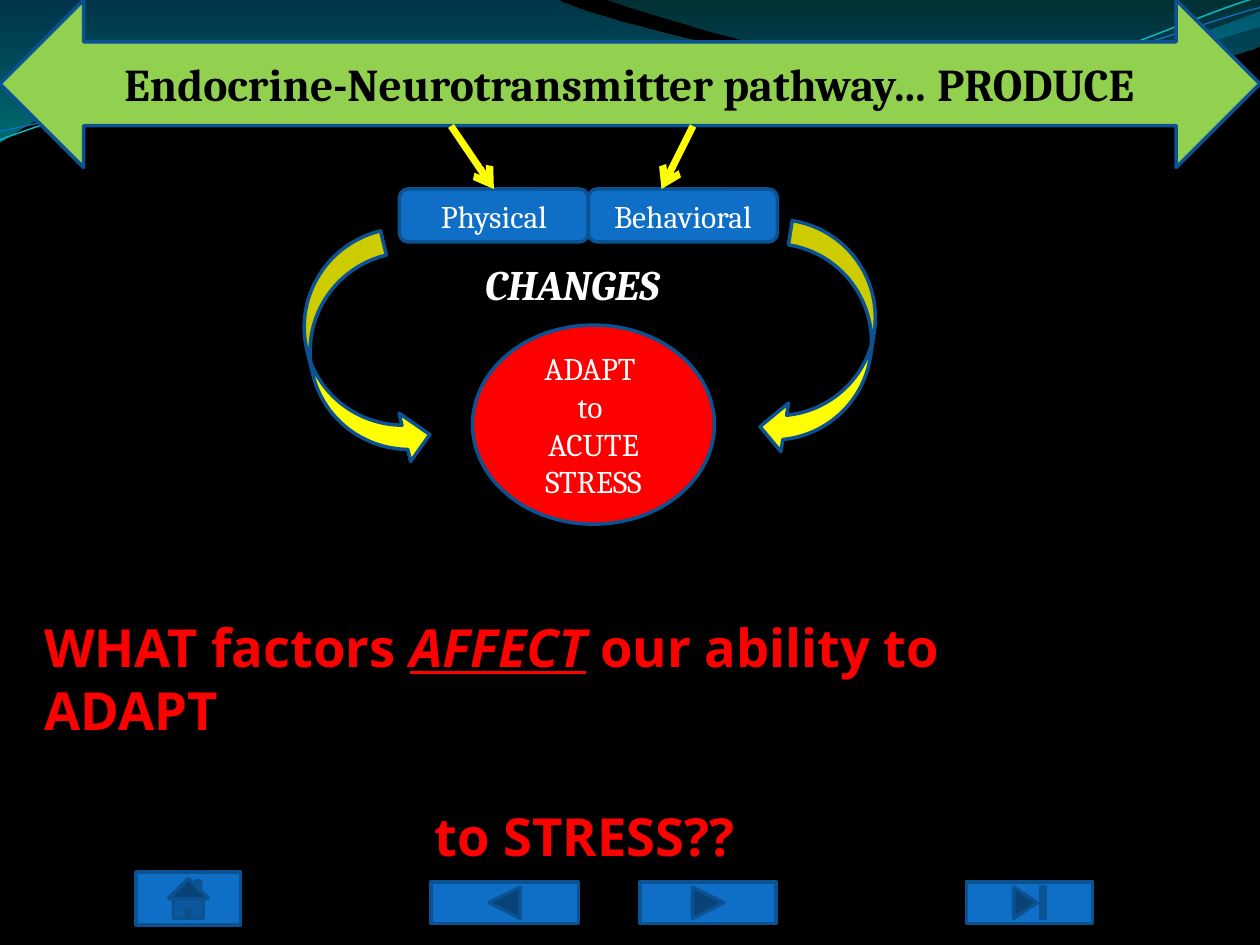
import dataclasses

import lxml.etree
import pptx
import pptx.dml.color
import pptx.enum.shapes
import pptx.enum.text
import pptx.oxml.ns
import pptx.util

SHAPES = pptx.enum.shapes.MSO_SHAPE
ALIGN = pptx.enum.text.PP_ALIGN
ANCHOR = pptx.enum.text.MSO_ANCHOR
Inches = pptx.util.Inches
Pt = pptx.util.Pt
qn = pptx.oxml.ns.qn


@dataclasses.dataclass(frozen=True)
class Theme:
    background: str = "000000"
    blue: str = "0F6FC6"
    outline: str = "0B5292"
    green: str = "92D050"
    yellow: str = "FFFF00"
    red: str = "FF0000"
    white: str = "FFFFFF"
    black: str = "000000"
    strand: str = "0AB8BF"
    wave_stops: tuple = ((0, "0074A1", 45), (1, "00C6CF", 55))
    crest_stops: tuple = ((0, "00A1A9", 30), (0.8, "008BBF", 45))
    serif: str = "Cambria"
    sans: str = "Open Sans"
    label_size: float = 18
    changes_size: float = 24
    heading_size: float = 26
    question_size: float = 30
    outline_width: float = 2
    pointer_width: float = 4


def rgb(value):
    return pptx.dml.color.RGBColor.from_string(value)


def add_xml(parent, tag, **attributes):
    return lxml.etree.SubElement(parent, qn(tag), attributes)


class SlideBuilder:
    def __init__(self, slide, theme):
        self.slide = slide
        self.theme = theme
        slide.background.fill.solid()
        slide.background.fill.fore_color.rgb = rgb(theme.background)

    def style_font(self, font, size, color, name=None, bold=False, italic=False):
        font.name = name or self.theme.serif
        font.size = Pt(size)
        font.color.rgb = rgb(color)
        font.bold = bold
        font.italic = italic

    def curved_outline(self, start, segments, closed):
        """Outline of cubic curves (6 numbers) and straight lines (2 numbers)."""
        anchors = [(Inches(s[-2]), Inches(s[-1])) for s in segments]
        builder = self.slide.shapes.build_freeform(*map(Inches, start))
        builder.add_line_segments(anchors, close=closed)
        outline = builder.convert_to_shape()
        outline.shadow.inherit = False
        # Bend the straight segments into cubic curves
        lines = list(outline._element.iter(qn("a:lnTo")))
        for line, segment in zip(lines, segments):
            if len(segment) == 6:
                curve = lxml.etree.Element(qn("a:cubicBezTo"))
                for x, y in zip(segment[::2], segment[1::2]):
                    add_xml(curve, "a:pt", x=str(Inches(x) - outline.left),
                            y=str(Inches(y) - outline.top))
                line.getparent().replace(line, curve)
        return outline

    def wave(self, start, segments, stops):
        """Closed band with a see-through vertical gradient."""
        band = self.curved_outline(start, segments, True)
        band.line.fill.background()
        band.fill.gradient()
        band.fill.gradient_angle = 270
        for stop, (position, color, _) in zip(band.fill.gradient_stops, stops):
            stop.position = position
            stop.color.rgb = rgb(color)
        colors = list(band._element.spPr.iter(qn("a:srgbClr")))
        for color, (_, _, opacity) in zip(colors, stops):
            add_xml(color, "a:alpha", val=str(opacity * 1000))

    def strand(self, start, segments, color, width):
        strand = self.curved_outline(start, segments, False)
        strand.fill.background()
        strand.line.color.rgb = rgb(color)
        strand.line.width = Pt(width)

    def shape(self, kind, box, fill, lines=(), size=None, color=None, bold=False, rotation=0):
        shape = self.slide.shapes.add_shape(kind, *map(Inches, box))
        shape.shadow.inherit = False
        shape.rotation = rotation
        shape.fill.solid()
        shape.fill.fore_color.rgb = rgb(fill)
        shape.line.color.rgb = rgb(self.theme.outline)
        shape.line.width = Pt(self.theme.outline_width)
        if lines:
            frame = shape.text_frame
            frame.vertical_anchor = ANCHOR.MIDDLE
            frame.text = "\n".join(lines)
            for paragraph in frame.paragraphs:
                paragraph.alignment = ALIGN.CENTER
                self.style_font(paragraph.font, size or self.theme.label_size,
                                color or self.theme.white, bold=bold)

    def pointer(self, start, end):
        pointer = self.slide.shapes.add_connector(
            pptx.enum.shapes.MSO_CONNECTOR.STRAIGHT, *map(Inches, start + end))
        pointer.line.color.rgb = rgb(self.theme.yellow)
        pointer.line.width = Pt(self.theme.pointer_width)
        properties = pointer._element.spPr
        add_xml(properties.find(qn("a:ln")), "a:tailEnd", type="arrow")
        add_xml(properties, "a:effectLst")

    def caption(self, text, box):
        frame = self.slide.shapes.add_textbox(*map(Inches, box)).text_frame
        frame.word_wrap = False
        frame.text = text
        self.style_font(frame.paragraphs[0].font, self.theme.changes_size,
                        self.theme.white, bold=True, italic=True)

    def question(self, before, stressed, after, ending, box):
        title = self.slide.shapes.title
        title.left, title.top, title.width, title.height = map(Inches, box)
        frame = title.text_frame
        frame.word_wrap = False
        frame.auto_size = pptx.enum.text.MSO_AUTO_SIZE.NONE
        frame.vertical_anchor = ANCHOR.TOP
        opening, closing = frame.paragraphs[0], frame.add_paragraph()
        for text in (before, stressed, after):
            run = opening.add_run()
            run.text = text
            if text == stressed:
                run.font.italic = run.font.underline = True
        closing.text = ending
        closing.space_before = Pt(36)
        for paragraph, alignment in ((opening, ALIGN.LEFT), (closing, ALIGN.CENTER)):
            paragraph.alignment = alignment
            self.style_font(paragraph.font, self.theme.question_size,
                            self.theme.red, self.theme.sans, bold=True)


def main():
    deck = pptx.Presentation()
    deck.slide_width, deck.slide_height = Inches(10), Inches(7.5)
    theme = Theme()
    page = SlideBuilder(deck.slides.add_slide(deck.slide_layouts[5]), theme)

    # Waves and strands along the top
    page.wave((0, 0), [(4.4, -0.01), (4.76, 0.17, 6.64, 0.63, 7.58, 0.63),
                       (8.53, 0.63, 9.58, 0.26, 10, 0.09), (10.01, 0.36),
                       (9.83, 0.44, 8.7, 0.76, 7.46, 0.75),
                       (6.22, 0.75, 3.82, 0.28, 2.57, 0.34),
                       (1.29, 0.36, 0.46, 0.83, -0.01, 1.13)], theme.wave_stops)
    page.wave((4.79, -0.01), [(5.09, 0.11, 6.82, 0.62, 7.69, 0.65),
                              (8.56, 0.69, 9.61, 0.32, 10, 0.21), (10, 0)],
              theme.crest_stops)
    page.strand((0, 1.11), [(0.48, 0.93, 1.58, 0.57, 2.77, 0.52),
                            (3.95, 0.47, 5.93, 0.89, 7.13, 0.8),
                            (8.33, 0.71, 9.38, 0.15, 9.98, -0.02)], theme.strand, 0.85)
    page.strand((0, 1.04), [(0.47, 0.96, 1.64, 0.61, 2.83, 0.56),
                            (4.03, 0.51, 5.97, 0.84, 7.17, 0.75),
                            (8.36, 0.67, 9.41, 0.21, 10, 0.06)], theme.blue, 0.75)

    # Navigation buttons
    for button, box in ((SHAPES.ACTION_BUTTON_BACK_OR_PREVIOUS, (3.42, 7, 1.17, 0.33)),
                        (SHAPES.ACTION_BUTTON_FORWARD_OR_NEXT, (5.08, 7, 1.08, 0.33)),
                        (SHAPES.ACTION_BUTTON_END, (7.67, 7, 1, 0.33)),
                        (SHAPES.ACTION_BUTTON_HOME, (1.08, 6.92, 0.83, 0.42))):
        page.shape(button, box, theme.blue)

    # Changes that lead to adaptation
    for column, change in enumerate(("Physical", "Behavioral")):
        page.shape(SHAPES.ROUNDED_RECTANGLE, (3.17 + 1.5 * column, 1.5, 1.5, 0.42),
                   theme.blue, [change])
    page.shape(SHAPES.OVAL, (3.75, 2.58, 1.92, 1.58), theme.red,
               ["ADAPT ", "to ", "ACUTE STRESS"])
    page.shape(SHAPES.CURVED_RIGHT_ARROW, (2.46, 1.9, 0.79, 1.86), theme.yellow, rotation=346.4)
    page.shape(SHAPES.CURVED_LEFT_ARROW, (6.14, 1.8, 0.78, 1.85), theme.yellow, rotation=8.9)

    # Closing question
    page.question("WHAT factors ", "AFFECT", " our ability to ADAPT", "to STRESS??",
                  (0.25, 4.83, 8.78, 1.62))

    # Pathway heading and its pointers
    page.shape(SHAPES.LEFT_RIGHT_ARROW, (0, 0, 10, 1.33), theme.green,
               ["Endocrine-Neurotransmitter pathway… PRODUCE"],
               theme.heading_size, theme.black, bold=True)
    page.pointer((3.58, 1), (3.92, 1.5))
    page.pointer((5.5, 1), (5.25, 1.5))
    page.caption("CHANGES", (3.75, 2, 1.81, 0.5))

    deck.save("out.pptx")


if __name__ == "__main__":
    main()
